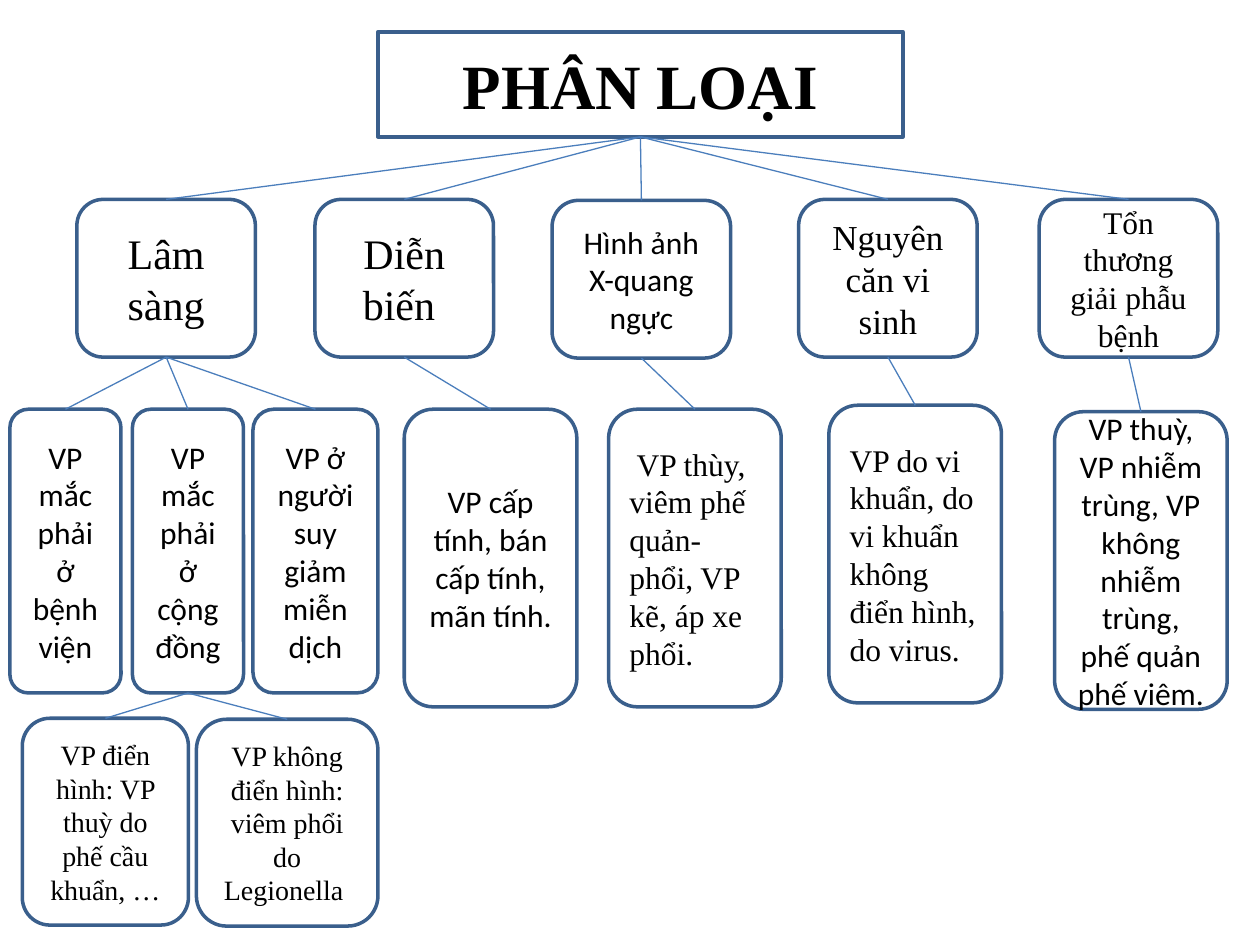
import pptx
import pptx.util
import pptx.dml.color
import pptx.enum.shapes
import pptx.enum.text
import pptx.oxml

Cm, Pt = pptx.util.Cm, pptx.util.Pt
ROUND = pptx.enum.shapes.MSO_SHAPE.ROUNDED_RECTANGLE
ALIGN = pptx.enum.text.PP_ALIGN
SERIF, SANS = "Times New Roman", "Calibri"
EDGE, LINK, INK = "3A5F8C", "4B7EBC", "000000"
TOP, BOTTOM = 0, 2  # connection sites of a rounded rectangle
NS = 'xmlns:a="http://schemas.openxmlformats.org/drawingml/2006/main"'

# Each row: left, top offset, width, size, font, align, text (cm, points)
HEADS = [
    (1.55, 0, 3.6, 24, SERIF, ALIGN.CENTER, "Lâm sàng"),
    (6.35, 0, 3.6, 24, SERIF, ALIGN.CENTER, "Diễn biến "),
    (11.13, 0.02, 3.6, 18, SANS, ALIGN.CENTER, "Hình ảnh X-quang ngực"),
    (16.1, 0, 3.6, 20, SERIF, ALIGN.CENTER, "Nguyên căn vi sinh"),
    (20.95, 0, 3.6, 18, SERIF, ALIGN.CENTER, "Tổn thương giải phẫu bệnh"),
]
SETTINGS = [
    (0.2, 0, 2.24, 18, SANS, ALIGN.CENTER, "VP mắc phải ở bệnh viện"),
    (2.67, 0, 2.24, 18, SANS, ALIGN.CENTER, "VP mắc phải ở cộng đồng"),
    (5.1, 0, 2.52, 18, SANS, ALIGN.CENTER, "VP ở người suy giảm miễn dịch"),
]
DETAILS = [
    (8.15, 0, 3.48, 18, SANS, ALIGN.CENTER,
     "VP cấp tính, bán cấp tính, mãn tính."),
    (12.27, 0, 3.48, 18, SERIF, ALIGN.LEFT,
     " VP thùy, viêm phế quản-phổi, VP kẽ, áp xe phổi."),
    (16.71, -0.08, 3.48, 18, SERIF, ALIGN.LEFT,
     "VP do vi khuẩn, do vi khuẩn không điển hình, do virus."),
    (21.26, 0.05, 3.48, 18, SANS, ALIGN.CENTER,
     "VP thuỳ, VP nhiễm trùng, VP không nhiễm trùng, phế quản phế viêm."),
]
TYPES = [
    (0.45, 0, 3.35, 16, SERIF, ALIGN.CENTER,
     "VP điển hình: VP thuỳ do phế cầu khuẩn, …"),
    (3.96, 0.02, 3.66, 16, SERIF, ALIGN.CENTER,
     "VP không điển hình: viêm phổi do Legionella "),
]


def color(code):
    return pptx.dml.color.RGBColor.from_string(code)


def style(node, text, size, font, align, bold=False):
    """Outline a node and write its text."""
    node.fill.background()
    node.line.color.rgb = color(EDGE)
    node.line.width = Pt(2)
    frame = node.text_frame
    frame.word_wrap = True
    frame.auto_size = pptx.enum.text.MSO_AUTO_SIZE.NONE
    frame.vertical_anchor = pptx.enum.text.MSO_ANCHOR.MIDDLE
    para = frame.paragraphs[0]
    para.alignment = align
    run = para.add_run()
    run.text = text
    run.font.name, run.font.size, run.font.bold = font, Pt(size), bold
    run.font.color.rgb = color(INK)


def root(slide, left, top, width, height):
    """Turn the title placeholder into the rounded root node."""
    node = slide.shapes.title
    node.left, node.top = Cm(left), Cm(top)
    node.width, node.height = Cm(width), Cm(height)
    node.element.spPr.append(pptx.oxml.parse_xml(
        f'<a:prstGeom {NS} prst="roundRect"><a:avLst/></a:prstGeom>'))
    style(node, "PHÂN LOẠI", 36, SERIF, ALIGN.CENTER, True)
    return node


def tier(slide, top, height, rows):
    """Place one level of nodes and return them from left to right."""
    nodes = []
    for left, shift, width, size, font, align, text in rows:
        node = slide.shapes.add_shape(
            ROUND, Cm(left), Cm(top + shift), Cm(width), Cm(height))
        node.shadow.inherit = False
        style(node, text, size, font, align)
        nodes.append(node)
    return nodes


def link(slide, parent, kids):
    """Join the bottom of a parent to the top of each child."""
    for kid in kids:
        line = slide.shapes.add_connector(
            pptx.enum.shapes.MSO_CONNECTOR.STRAIGHT, 0, 0, 0, 0)
        line.begin_connect(parent, BOTTOM)
        line.end_connect(kid, TOP)
        line.line.color.rgb = color(LINK)
        line.line.width = Pt(0.75)
        line.element.spPr.append(pptx.oxml.parse_xml(f"<a:effectLst {NS}/>"))


def main():
    deck = pptx.Presentation()
    deck.slide_width, deck.slide_height = Cm(25.4), Cm(19.05)
    slide = deck.slides.add_slide(deck.slide_layouts.get_by_name("Title Only"))
    title = root(slide, 7.62, 0.64, 10.58, 2.12)
    heads = tier(slide, 4.02, 3.18, HEADS)
    settings = tier(slide, 8.25, 5.72, SETTINGS)
    details = tier(slide, 8.25, 6, DETAILS)
    types = tier(slide, 14.48, 4.17, TYPES)
    link(slide, title, heads)
    link(slide, heads[0], settings)
    link(slide, settings[1], types)
    for head, detail in zip(heads[1:], details):
        link(slide, head, [detail])
    deck.save("out.pptx")


if __name__ == "__main__":
    main()
